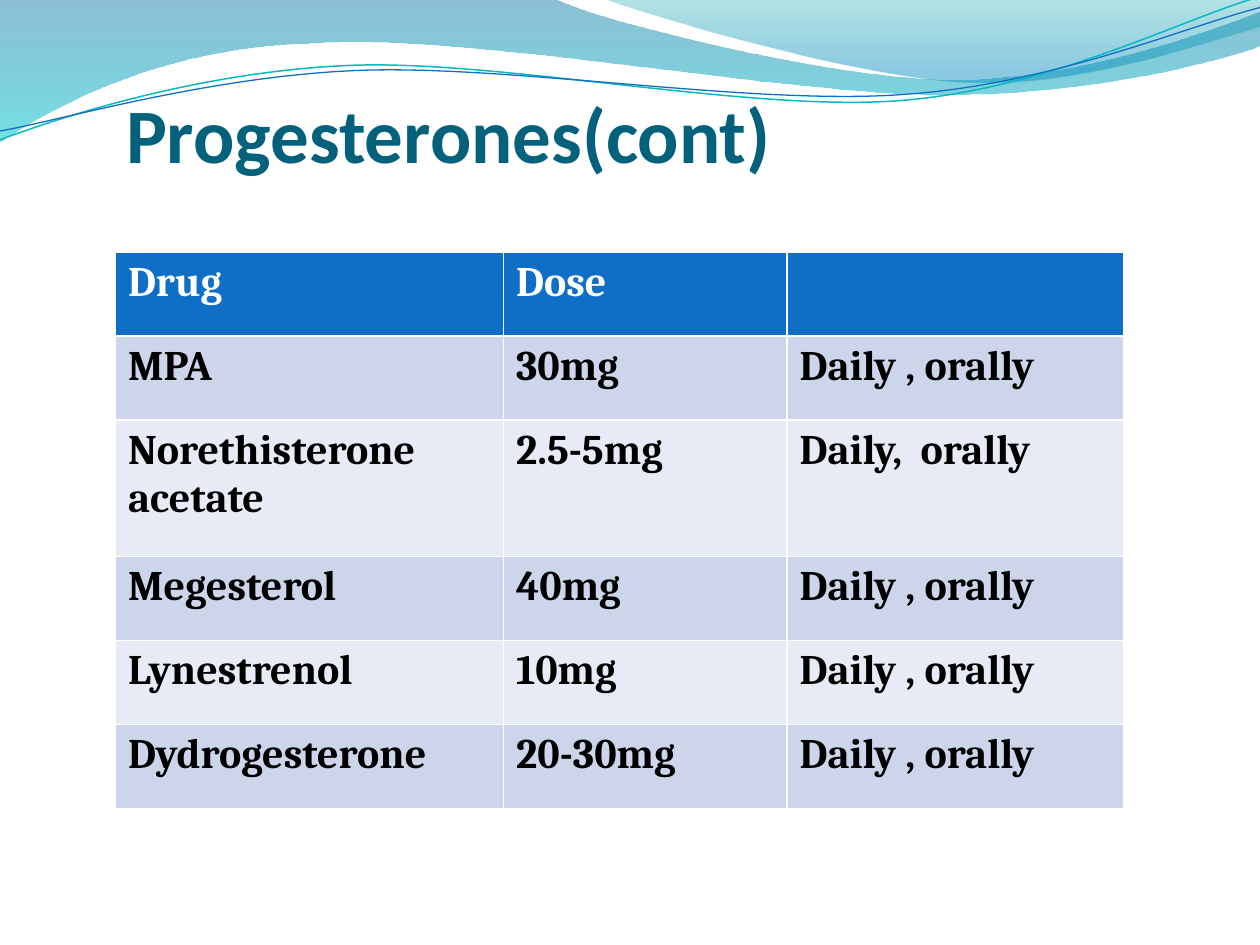
from pptx import Presentation
from pptx.dml.color import RGBColor as RGB
from pptx.enum.text import MSO_ANCHOR as ANC, MSO_AUTO_SIZE as FIT, PP_ALIGN as AL
from pptx.oxml.ns import qn
from pptx.util import Inches, Pt
from lxml.etree import SubElement as Sub

# Content
TITLE = "Progesterones(cont)"
ROWS = [
    ("Drug", "Dose", ""),
    ("MPA", "30mg", "Daily , orally"),
    ("Norethisterone acetate", "2.5-5mg", "Daily,  orally"),
    ("Megesterol", "40mg", "Daily , orally"),
    ("Lynestrenol", "10mg", "Daily , orally"),
    ("Dydrogesterone", "20-30mg", "Daily , orally"),
]
COLS = (3.08, 2.25, 2.67)
LEFT, TOP = 11 / 12, 2
ROW_H, TALL_H, TALL = 2 / 3, 13 / 12, 2

THEME = dict(
    title="04617B", head="0F6FC6", bands=("E7EBF5", "CCD5EA"),
    light="FFFFFF", dark="000000",
    title_font="Calibri", body_font="Cambria", title_size=44, body_size=24,
)

# Waves: points in inches; a pair is a straight step, six numbers a Bézier
# Gradient stops: position, colour, opacity in percent
BANDS = [
    ([(0, 0), (4.4, -0.01), (4.76, 0.17, 6.64, 0.63, 7.58, 0.63),
      (8.53, 0.63, 9.58, 0.26, 10, 0.09), (10.01, 0.36),
      (9.83, 0.44, 8.7, 0.76, 7.46, 0.75), (6.22, 0.75, 3.82, 0.28, 2.57, 0.34),
      (1.29, 0.36, 0.46, 0.83, -0.01, 1.13), (0, 0)],
     [(0, "0074A1", 45), (1, "00C6CF", 55)]),
    ([(4.79, -0.01), (5.09, 0.11, 6.82, 0.62, 7.69, 0.65),
      (8.56, 0.69, 9.61, 0.32, 10, 0.21), (10, 0), (4.79, -0.01)],
     [(0, "00A1A9", 30), (0.8, "008BBF", 45)]),
]
CURVES = [
    ([(0, 1.11), (0.48, 0.93, 1.58, 0.57, 2.77, 0.52),
      (3.95, 0.47, 5.93, 0.89, 7.13, 0.8), (8.33, 0.71, 9.38, 0.15, 9.98, -0.02)],
     "0AB8BF", 0.85),
    ([(0, 1.04), (0.47, 0.96, 1.64, 0.61, 2.83, 0.56),
      (4.03, 0.51, 5.97, 0.84, 7.17, 0.75), (8.36, 0.67, 9.41, 0.21, 10, 0.06)],
     "0F6FC6", 0.75),
]


def put(frame, text, font, size, color, bold=True):
    para = frame.paragraphs[0]
    para.alignment = AL.LEFT
    run = para.add_run()
    run.text = text
    face = run.font
    face.name, face.size, face.bold = font, Pt(size), bold
    face.color.rgb = RGB.from_string(color)


def wave(slide, steps, close):
    """Draw a line through all knots, then join each three into a Bézier."""
    pts = [(Inches(step[i]), Inches(step[i + 1]))
           for step in steps for i in range(0, len(step), 2)]
    pen = slide.shapes.build_freeform(*pts[0], scale=1.0)
    pen.add_line_segments(pts[1:], close=close)
    shape = pen.convert_to_shape()
    shape.shadow.inherit = False
    lines = iter(list(shape.element.iter(qn("a:lnTo"))))
    for step in steps[1:]:
        line = next(lines)
        if len(step) == 6:
            bend = line.makeelement(qn("a:cubicBezTo"))
            line.addprevious(bend)
            for part in (line, next(lines), next(lines)):
                bend.append(part[0])
                part.getparent().remove(part)
    return shape


def shade(shape, stops):
    shape.line.fill.background()
    shape.fill.gradient()
    shape.fill.gradient_angle = 270
    for stop, (pos, color, _) in zip(shape.fill.gradient_stops, stops):
        stop.position = pos
        stop.color.rgb = RGB.from_string(color)
    for node, (_, _, alpha) in zip(shape.element.spPr.iter(qn("a:srgbClr")), stops):
        Sub(node, qn("a:alpha"), val=str(alpha * 1000))


def edge(cell, color, width):
    props = cell._tc.get_or_add_tcPr()
    for i, side in enumerate(("lnL", "lnR", "lnT", "lnB")):
        line = props.makeelement(qn("a:" + side), {"w": str(Pt(width))})
        Sub(Sub(line, qn("a:solidFill")), qn("a:srgbClr"), val=color)
        props.insert(i, line)


def main():
    th = THEME
    deck = Presentation()
    deck.slide_width, deck.slide_height = Inches(10), Inches(7.5)
    slide = deck.slides.add_slide(deck.slide_layouts[5])

    # Waves
    for steps, stops in BANDS:
        shade(wave(slide, steps, True), stops)
    for steps, color, width in CURVES:
        curve = wave(slide, steps, False)
        curve.fill.background()
        curve.line.color.rgb = RGB.from_string(color)
        curve.line.width = Pt(width)

    # Title, in front of the waves
    title = slide.shapes.title
    title.element.getparent().append(title.element)
    title.left, title.top = Inches(1), Inches(0.3)
    title.width, title.height = Inches(8.5), Inches(1.12)
    frame = title.text_frame
    frame.auto_size, frame.word_wrap = FIT.NONE, True
    frame.vertical_anchor = ANC.BOTTOM
    frame.margin_left = frame.margin_right = frame.margin_bottom = 0
    frame.margin_top = Inches(0.05)
    put(frame, TITLE, th["title_font"], th["title_size"], th["title"])

    # Dose table
    highs = [TALL_H if i == TALL else ROW_H for i in range(len(ROWS))]
    table = slide.shapes.add_table(
        len(ROWS), len(COLS), Inches(LEFT), Inches(TOP),
        Inches(sum(COLS)), Inches(sum(highs))).table
    for col, wide in zip(table.columns, COLS):
        col.width = Inches(wide)
    for i, (row, texts) in enumerate(zip(table.rows, ROWS)):
        row.height = Inches(highs[i])
        fill = th["bands"][i % 2] if i else th["head"]
        ink = th["dark"] if i else th["light"]
        for cell, text in zip(row.cells, texts):
            cell.fill.solid()
            cell.fill.fore_color.rgb = RGB.from_string(fill)
            edge(cell, th["light"], 1)
            if text:
                put(cell.text_frame, text, th["body_font"], th["body_size"], ink)

    deck.save("out.pptx")


if __name__ == "__main__":
    main()
